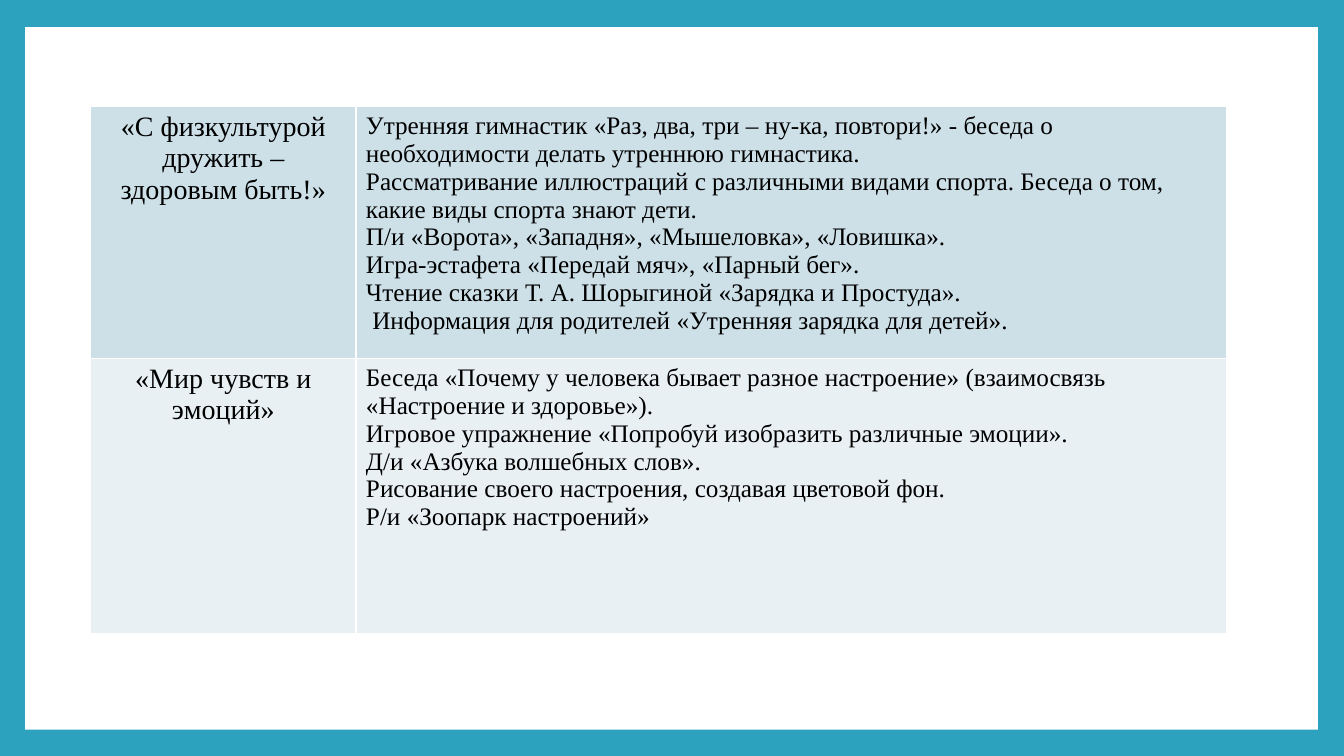
import lxml.etree
import pptx
import pptx.dml.color
import pptx.enum.shapes
import pptx.enum.text
import pptx.oxml.ns
import pptx.util

Inches = pptx.util.Inches
Pt = pptx.util.Pt
ALIGN = pptx.enum.text.PP_ALIGN

TOPICS = [
    ("«С физкультурой дружить – здоровым быть!»", [
        "Утренняя гимнастик «Раз, два, три – ну-ка, повтори!» - беседа о необходимости делать утреннюю гимнастика.",
        "Рассматривание иллюстраций с различными видами спорта. Беседа о том, какие виды спорта знают дети.",
        "П/и «Ворота», «Западня», «Мышеловка», «Ловишка».",
        "Игра-эстафета «Передай мяч», «Парный бег».",
        "Чтение сказки Т. А. Шорыгиной «Зарядка и Простуда».",
        " Информация для родителей «Утренняя зарядка для детей».",
    ], 2.5, "CDE0E8"),
    ("«Мир чувств и эмоций»", [
        "Беседа «Почему у человека бывает разное настроение» (взаимосвязь «Настроение и здоровье»).",
        "Игровое упражнение «Попробуй изобразить различные эмоции».",
        "Д/и «Азбука волшебных слов».",
        "Рисование своего настроения, создавая цветовой фон.",
        "Р/и «Зоопарк настроений»",
    ], 2.73, "E8F0F4"),
]


def color(code):
    return pptx.dml.color.RGBColor.from_string(code)


def paint(fill, code):
    fill.solid()
    fill.fore_color.rgb = color(code)


def write(frame, lines, size=18, font="Times New Roman", ink="000000", align=ALIGN.LEFT):
    for number, line in enumerate(lines):
        paragraph = frame.paragraphs[0] if number == 0 else frame.add_paragraph()
        paragraph.alignment = align
        run = paragraph.add_run()
        run.text = line
        run.font.size = Pt(size)
        run.font.name = font
        run.font.color.rgb = color(ink)


class TopicSlide:
    """Holds the style and the current slide of the activity plan."""

    frame_color = "2DA2BF"
    paper = "FFFFFF"

    def __init__(self, deck):
        self.slide = deck.slides.add_slide(deck.slide_layouts[6])
        paint(self.slide.background.fill, self.frame_color)

    def panel(self, left, top, width, height):
        sheet = self.slide.shapes.add_shape(
            pptx.enum.shapes.MSO_SHAPE.RECTANGLE,
            Inches(left), Inches(top), Inches(width), Inches(height))
        sheet.shadow.inherit = False
        paint(sheet.fill, self.paper)
        sheet.line.fill.background()

    def border(self, cell):
        qn = pptx.oxml.ns.qn
        properties = cell._tc.get_or_add_tcPr()
        for position, side in enumerate(("a:lnL", "a:lnR", "a:lnT", "a:lnB")):
            edge = lxml.etree.Element(qn(side), w=str(Pt(1)))
            solid = lxml.etree.SubElement(edge, qn("a:solidFill"))
            lxml.etree.SubElement(solid, qn("a:srgbClr"), val=self.paper)
            properties.insert(position, edge)

    def table(self, topics, left, top, widths):
        heights = [height for _, _, height, _ in topics]
        plan = self.slide.shapes.add_table(
            len(topics), len(widths), Inches(left), Inches(top),
            Inches(sum(widths)), Inches(sum(heights))).table
        plan.first_row = False
        plan.horz_banding = False
        for column, width in zip(plan.columns, widths):
            column.width = Inches(width)
        for row, (topic, activities, height, shade) in zip(plan.rows, topics):
            row.height = Inches(height)
            for cell in row.cells:
                paint(cell.fill, shade)
                self.border(cell)
            write(row.cells[0].text_frame, [topic], size=20, align=ALIGN.CENTER)
            write(row.cells[1].text_frame, activities)


def main():
    deck = pptx.Presentation()
    deck.slide_width = Inches(13.33)
    deck.slide_height = Inches(7.5)
    plan = TopicSlide(deck)
    plan.panel(0.25, 0.27, 12.82, 6.97)
    plan.table(TOPICS, 0.9, 1.06, [2.63, 8.64])
    deck.save("out.pptx")


if __name__ == "__main__":
    main()
